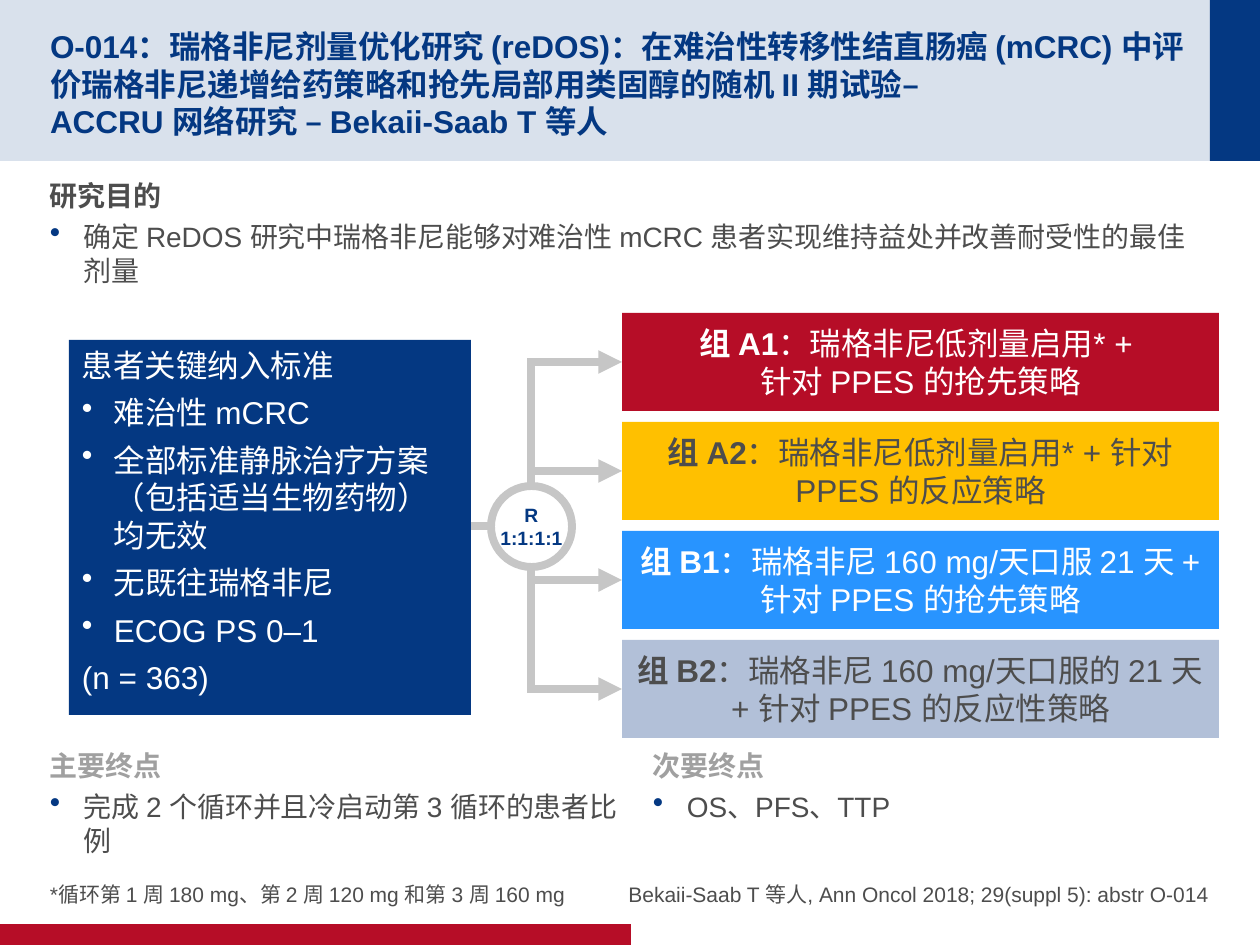
from lxml import etree
from pptx import Presentation
from pptx import util as u
from pptx.dml.color import RGBColor
from pptx.enum import shapes, text
from pptx.oxml import ns

NAVY = RGBColor(0x04, 0x38, 0x82)
RED = RGBColor(0xB6, 0x0D, 0x27)
AMBER = RGBColor(0xFF, 0xC0, 0x00)
BLUE = RGBColor(0x28, 0x94, 0xFF)
PALE = RGBColor(0xB2, 0xC0, 0xD8)
WHITE = RGBColor(0xFF, 0xFF, 0xFF)
INK = RGBColor(0x4D, 0x4D, 0x4D)
GREY = RGBColor(0xA0, 0xA0, 0xA0)
LINE = RGBColor(0xC6, 0xC6, 0xC6)

LEFT, CENTER, RIGHT = text.PP_ALIGN.LEFT, text.PP_ALIGN.CENTER, text.PP_ALIGN.RIGHT
TOP, MIDDLE, BOTTOM = text.MSO_ANCHOR.TOP, text.MSO_ANCHOR.MIDDLE, text.MSO_ANCHOR.BOTTOM

TITLE = ("O-014：瑞格非尼剂量优化研究 (reDOS)：在难治性转移性结直肠癌 (mCRC) "
         "中评价瑞格非尼递增给药策略和抢先局部用类固醇的随机 II 期试验– \v"
         "ACCRU 网络研究 – Bekaii-Saab T 等人")
CRITERIA = ["难治性 mCRC", "全部标准静脉治疗方案（包括适当生物药物）均无效",
            "无既往瑞格非尼", "ECOG PS 0–1"]
ARMS = [
    ("组 A1", "：瑞格非尼低剂量启用* + \v针对 PPES 的抢先策略", RED, WHITE),
    ("组 A2", "：瑞格非尼低剂量启用* + 针对 PPES 的反应策略", AMBER, INK),
    ("组 B1", "：瑞格非尼 160 mg/天口服 21 天 + 针对 PPES 的抢先策略", BLUE, WHITE),
    ("组 B2", "：瑞格非尼 160 mg/天口服的 21 天 + 针对 PPES 的反应性策略", PALE, INK),
]
ARM_HEIGHT, ARM_PITCH = 98, 109


def px(*lengths):
    """Turn pixels at 126 to the inch into EMU."""
    return [u.Emu(round(n * 914400 / 126)) for n in lengths]


def style(paragraph, size, color, bold=False, align=LEFT, after=0):
    """Format a paragraph and its runs alike."""
    paragraph.alignment = align
    paragraph.space_after = u.Pt(after)
    for part in (paragraph, *paragraph.runs):
        part.font.name = "Arial"
        part.font.size = u.Pt(size)
        part.font.color.rgb = color
        part.font.bold = bold


def bullet(paragraph, indent, color, percent=100):
    """Give a paragraph a hanging bullet."""
    props = paragraph._p.get_or_add_pPr()
    props.set("marL", str(px(indent)[0]))
    props.set("indent", str(-px(indent)[0]))
    marks = [etree.Element(ns.qn(tag)) for tag in ("a:buClr", "a:buSzPct", "a:buChar")]
    etree.SubElement(marks[0], ns.qn("a:srgbClr")).set("val", str(color))
    marks[1].set("val", str(percent * 1000))
    marks[2].set("char", "•")
    defaults = props.find(ns.qn("a:defRPr"))
    for mark in marks:
        defaults.addprevious(mark)


def set_frame(frame, insets, anchor=TOP, wrap=True):
    """Set the margins, anchor and wrapping of a text frame."""
    frame.auto_size = text.MSO_AUTO_SIZE.NONE
    frame.word_wrap = wrap
    frame.vertical_anchor = anchor
    (frame.margin_left, frame.margin_top,
     frame.margin_right, frame.margin_bottom) = px(*insets)


def add_block(slide, box, fill, kind=shapes.MSO_SHAPE.RECTANGLE):
    """Add a plain filled shape without outline or shadow."""
    block = slide.shapes.add_shape(kind, *px(*box))
    block.shadow.inherit = False
    block.fill.solid()
    block.fill.fore_color.rgb = fill
    block.line.fill.background()
    return block


def add_link(slide, start, end, arrow=False):
    """Draw a thick grey line, with an arrowhead at its end if asked."""
    link = slide.shapes.add_connector(shapes.MSO_CONNECTOR.STRAIGHT, *px(*start, *end))
    link.line.color.rgb = LINE
    link.line.width = u.Pt(4.5)
    if arrow:
        etree.SubElement(link.line._get_or_add_ln(), ns.qn("a:tailEnd")).set("type", "triangle")
    etree.SubElement(link._element.spPr, ns.qn("a:effectLst"))


def add_header(slide, box):
    """Place the title on its tinted band with a navy end piece."""
    x, y, width, height = box
    band = add_block(slide, box, NAVY)
    tint = band._element.spPr.find(".//" + ns.qn("a:srgbClr"))
    etree.SubElement(tint, ns.qn("a:alpha")).set("val", "15000")
    add_block(slide, (x + width - 50, y, 50, height), NAVY)
    title = slide.shapes.title
    title.left, title.top, title.width, title.height = px(x + 50, y + 25, 1135, 111)
    set_frame(title.text_frame, (0, 6, 0, 0), MIDDLE)
    title.text_frame.text = TITLE
    style(title.text_frame.paragraphs[0], 18, NAVY, bold=True)
    slide.shapes._spTree.append(title._element)


def add_section(slide, box, heading, point, color, inset=0):
    """Write a bold heading with one bullet point under it."""
    frame = slide.shapes.add_textbox(*px(*box)).text_frame
    set_frame(frame, (inset, 6, inset, 6))
    frame.text = heading
    style(frame.paragraphs[0], 16, color, bold=True, after=4)
    detail = frame.add_paragraph()
    detail.text = point
    style(detail, 16, INK, after=4)
    bullet(detail, 34, NAVY, 110)


def add_criteria(slide, box):
    """List the inclusion criteria in a navy panel."""
    frame = add_block(slide, box, NAVY).text_frame
    set_frame(frame, (13, 6, 13, 6))
    frame.text = "\n".join(["患者关键纳入标准", *CRITERIA, "(n = 363)"])
    for paragraph in frame.paragraphs:
        style(paragraph, 18, WHITE, after=5.4)
    for criterion in frame.paragraphs[1:-1]:
        bullet(criterion, 32, WHITE)


def add_arm(slide, box, name, regimen, fill, color):
    """Show one treatment arm, its name in bold."""
    frame = add_block(slide, box, fill).text_frame
    set_frame(frame, (13, 0, 13, 0), MIDDLE)
    label = frame.paragraphs[0]
    label.text = name
    for number, line in enumerate(regimen.split("\v")):
        if number:
            label.add_line_break()
        label.add_run().text = line
    style(label, 18, color, align=CENTER)
    label.runs[0].font.bold = True


def add_randomisation(slide, box, panel_right, arms_left, centres):
    """Join the criteria panel to the arms through the randomisation circle."""
    x, y, width, height = box
    middle = x + width // 2
    add_link(slide, (panel_right, y + height // 2), (x, y + height // 2))
    add_link(slide, (middle, y), (middle, centres[0] - 4))
    add_link(slide, (middle, y + height), (middle, centres[-1] + 4))
    for centre in centres:
        add_link(slide, (middle, centre), (arms_left, centre), arrow=True)
    circle = add_block(slide, box, WHITE, shapes.MSO_SHAPE.OVAL)
    circle.line.color.rgb = LINE
    circle.line.width = u.Pt(4.5)
    set_frame(circle.text_frame, (13, 6, 13, 6), MIDDLE, wrap=False)
    circle.text_frame.paragraphs[0].text = "R\v1:1:1:1"
    style(circle.text_frame.paragraphs[0], 11, NAVY, bold=True, align=CENTER)


def add_design(slide, box):
    """Lay out the study design from criteria to arms."""
    x, y, width, height = box
    arms_left, arms_width = x + 553, width - 553
    add_criteria(slide, (x, y + 27, 402, 375))
    tops = [y + ARM_PITCH * number for number in range(len(ARMS))]
    for top, arm in zip(tops, ARMS):
        add_arm(slide, (arms_left, top, arms_width, ARM_HEIGHT), *arm)
    add_randomisation(slide, (x + 422, y + 173, 81, 81), x + 402, arms_left,
                      [top + ARM_HEIGHT // 2 for top in tops])


def add_footnote(slide, box, note, align):
    """Write a small note that sits on the bottom of its box."""
    frame = slide.shapes.add_textbox(*px(*box)).text_frame
    set_frame(frame, (0, 0, 0, 0), BOTTOM)
    frame.text = note
    style(frame.paragraphs[0], 12, INK, align=align, after=4)


def main():
    """Build the study design slide."""
    deck = Presentation()
    deck.slide_width, deck.slide_height = px(1260, 945)
    slide = deck.slides.add_slide(deck.slide_layouts[5])
    add_header(slide, (0, 0, 1260, 161))
    add_block(slide, (0, 924, 631, 21), RED)
    add_section(slide, (50, 173, 1159, 654), "研究目的",
                "确定 ReDOS 研究中瑞格非尼能够对难治性 mCRC 患者实现维持益处并改善耐受性的最佳剂量", INK)
    add_design(slide, (69, 313, 1150, 425))
    add_section(slide, (50, 743, 570, 125), "主要终点",
                "完成 2 个循环并且冷启动第 3 循环的患者比例", GREY)
    add_section(slide, (640, 743, 570, 125), "次要终点", "OS、PFS、TTP", GREY, inset=13)
    add_footnote(slide, (50, 840, 570, 67),
                 "*循环第 1 周 180 mg、第 2 周 120 mg 和第 3 周 160 mg", LEFT)
    add_footnote(slide, (620, 840, 589, 67),
                 "Bekaii-Saab T 等人, Ann Oncol 2018; 29(suppl 5): abstr O-014", RIGHT)
    deck.save("out.pptx")


if __name__ == "__main__":
    main()
